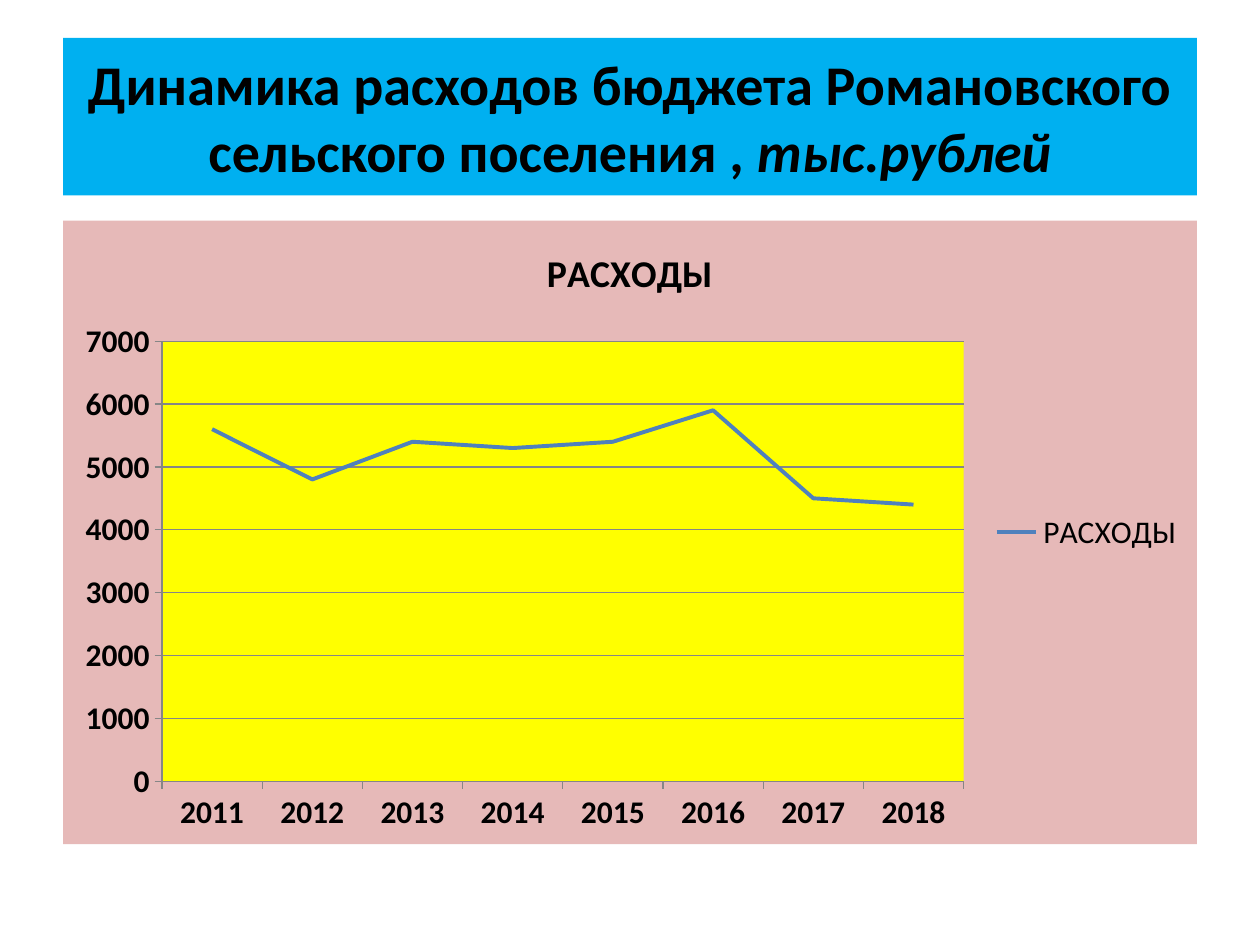
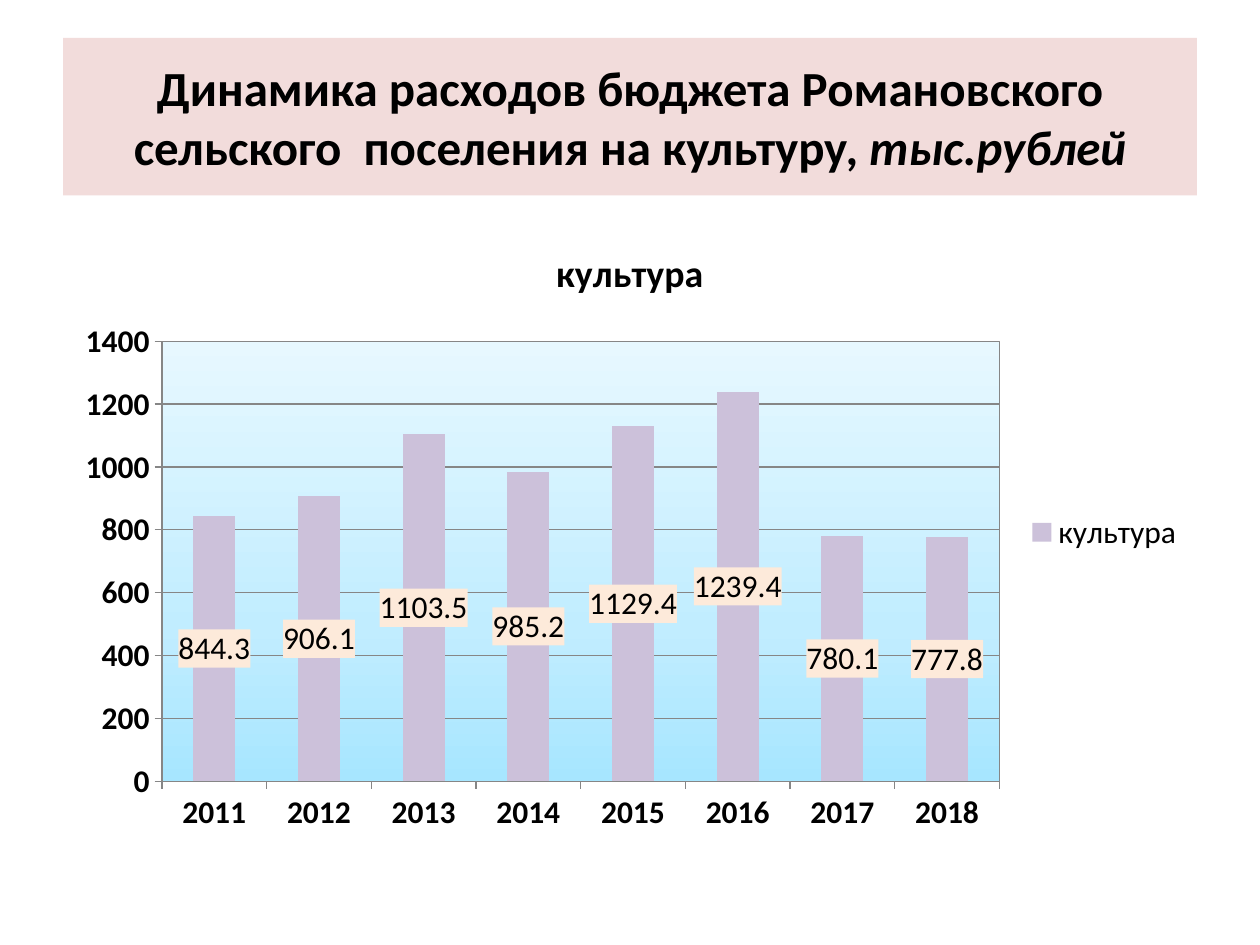
import pptx
import pptx.chart.data
import pptx.dml.color
import pptx.enum.chart
import pptx.enum.text
import pptx.oxml
import pptx.oxml.ns
import pptx.util

Inches = pptx.util.Inches
Pt = pptx.util.Pt
FONT = "Calibri"
BLACK = "000000"
GRID = "868686"
TITLE_BOX = (0.5, 0.3, 9, 1.25)
CHART_BOX = (0.5, 1.75, 9, 4.95)
YEARS = [str(year) for year in range(2011, 2019)]
NAMESPACES = pptx.oxml.ns.nsdecls("a", "c")


def color(value):
    """Return the colour for a hex string."""
    return pptx.dml.color.RGBColor.from_string(value)


def format_font(font, size=18, bold=False, italic=False, fill=BLACK):
    """Apply the shared typeface and the given format to a font."""
    font.name = FONT
    font.size = Pt(size)
    font.bold = bold
    font.italic = italic
    font.color.rgb = color(fill)


def add_text(paragraph, text, **text_format):
    """Add a formatted run to a paragraph."""
    run = paragraph.add_run()
    run.text = text
    format_font(run.font, **text_format)


def solid_fill(value):
    """Return the XML of a solid fill."""
    return f'<a:solidFill><a:srgbClr val="{value}"/></a:solidFill>'


def gradient_fill(stops):
    """Return the XML of a gradient that rises from bottom to top."""
    marks = "".join(
        f'<a:gs pos="{percent * 1000}"><a:srgbClr val="{value}"/></a:gs>'
        for percent, value in stops)
    return (f'<a:gradFill><a:gsLst>{marks}</a:gsLst>'
            '<a:lin ang="16200000" scaled="0"/></a:gradFill>')


def chart_part_style(fill="<a:noFill/>", line="<a:noFill/>"):
    """Return shape properties for a part of a chart."""
    return pptx.oxml.parse_xml(
        f'<c:spPr {NAMESPACES}>{fill}<a:ln w="9525">{line}</a:ln></c:spPr>')


def add_title(slide, box, parts, size, fill):
    """Place the title as a filled band with the unit in italics."""
    title = slide.shapes.title
    title.left, title.top, title.width, title.height = map(Inches, box)
    title.fill.solid()
    title.fill.fore_color.rgb = color(fill)
    title.text_frame.vertical_anchor = pptx.enum.text.MSO_ANCHOR.MIDDLE
    paragraph = title.text_frame.paragraphs[0]
    paragraph.alignment = pptx.enum.text.PP_ALIGN.CENTER
    heading, unit = parts
    add_text(paragraph, heading, size=size, bold=True)
    add_text(paragraph, unit, size=size, bold=True, italic=True)


def add_yearly_chart(slide, box, kind, name, values, area_style, plot_style):
    """Add a titled chart of one series by year and return its plot."""
    data = pptx.chart.data.CategoryChartData()
    data.categories = YEARS
    data.add_series(name, values)
    chart = slide.shapes.add_chart(kind, *map(Inches, box), data).chart
    format_font(chart.font)
    chart.has_title = True
    add_text(chart.chart_title.text_frame.paragraphs[0], name, size=21.6, bold=True)
    chart.chart_title.include_in_layout = False
    chart.has_legend = True
    chart.legend.position = pptx.enum.chart.XL_LEGEND_POSITION.RIGHT
    chart.legend.include_in_layout = False
    format_font(chart.legend.font)
    for axis in (chart.category_axis, chart.value_axis):
        format_font(axis.tick_labels.font, bold=True)
        axis.major_tick_mark = pptx.enum.chart.XL_TICK_MARK.OUTSIDE
        axis.format.line.color.rgb = color(GRID)
    chart.value_axis.has_major_gridlines = True
    chart.value_axis.major_gridlines.format.line.color.rgb = color(GRID)
    chart_space = chart.element
    chart_space.find(pptx.oxml.ns.qn("c:chart")).addnext(area_style)
    chart_space.find(".//" + pptx.oxml.ns.qn("c:plotArea")).append(plot_style)
    plot = chart.plots[0]
    plot.vary_by_categories = False
    return plot


def build_total_slide(presentation):
    """Build the slide on total spending with a line chart."""
    slide = presentation.slides.add_slide(presentation.slide_layouts[5])
    add_title(slide, TITLE_BOX,
              ("Динамика расходов бюджета Романовского сельского поселения , ",
               "тыс.рублей"), 32, "00B0F0")
    plot = add_yearly_chart(
        slide, CHART_BOX, pptx.enum.chart.XL_CHART_TYPE.LINE_STACKED, "РАСХОДЫ",
        (5600, 4800, 5400, 5300, 5400, 5900, 4500, 4400),
        chart_part_style(solid_fill("E6B9B8")),
        chart_part_style(solid_fill("FFFF00")))
    series = plot.series[0]
    series.smooth = False
    series.marker.style = pptx.enum.chart.XL_MARKER_STYLE.NONE
    series.format.line.color.rgb = color("4F81BD")
    series.format.line.width = Pt(2.25)


def build_culture_slide(presentation):
    """Build the slide on culture spending with labelled columns."""
    slide = presentation.slides.add_slide(presentation.slide_layouts[5])
    add_title(slide, TITLE_BOX,
              ("Динамика расходов бюджета Романовского сельского  поселения на культуру, ",
               "тыс.рублей"), 28, "F2DCDB")
    plot = add_yearly_chart(
        slide, CHART_BOX, pptx.enum.chart.XL_CHART_TYPE.COLUMN_STACKED, "культура",
        (844.3, 906.1, 1103.5, 985.2, 1129.4, 1239.4, 780.1, 777.8),
        chart_part_style(),
        chart_part_style(
            gradient_fill([(0, "A7E6FF"), (35, "C1EDFF"), (100, "E7F8FF")]),
            solid_fill(GRID)))
    plot.gap_width = 150
    plot.overlap = 100
    series = plot.series[0]
    series.format.fill.solid()
    series.format.fill.fore_color.rgb = color("CCC1DA")
    labels = series.data_labels
    labels.show_value = True
    format_font(labels.font)
    label_text = labels._element.find(pptx.oxml.ns.qn("c:txPr"))
    label_text.addprevious(chart_part_style(solid_fill("FDEADA")))


def main():
    """Build and save the presentation."""
    presentation = pptx.Presentation()
    presentation.slide_width = Inches(10)
    presentation.slide_height = Inches(7.5)
    build_total_slide(presentation)
    build_culture_slide(presentation)
    presentation.save("out.pptx")


if __name__ == "__main__":
    main()
